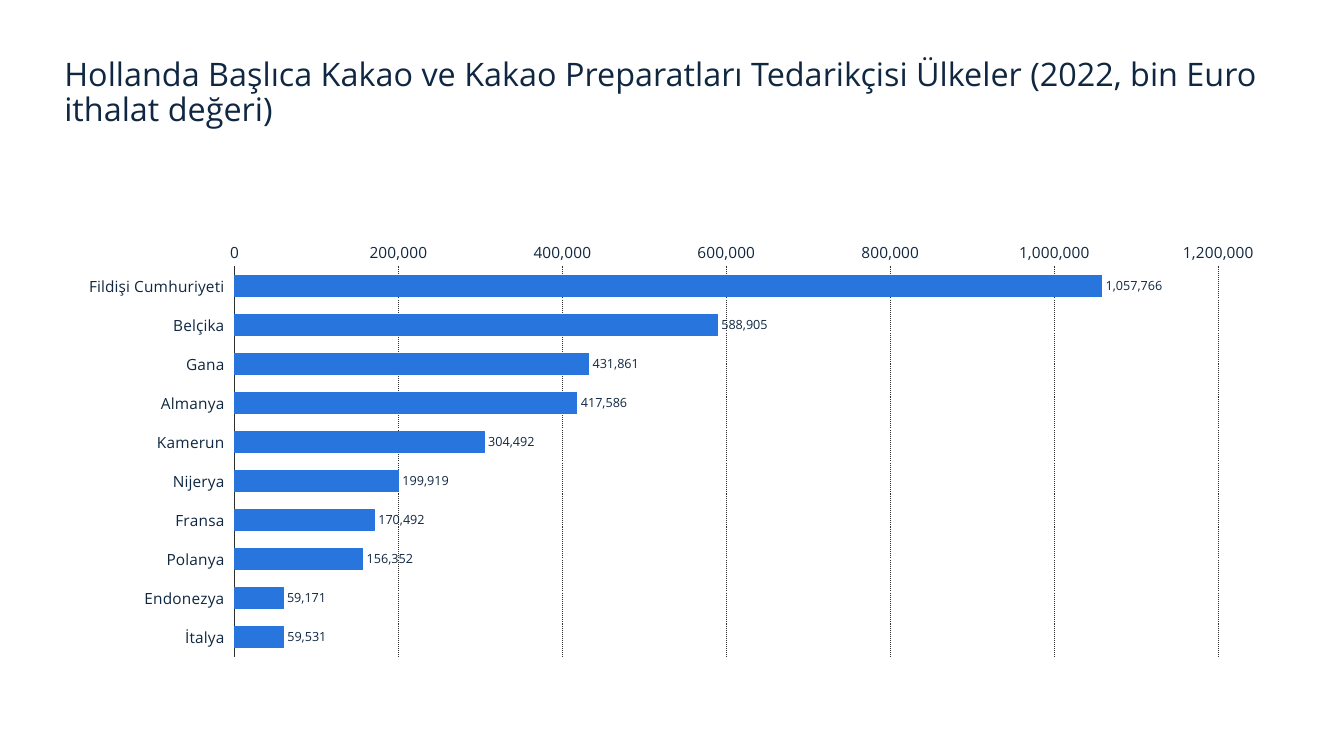
from pptx import Presentation
from pptx.chart.data import CategoryChartData
from pptx.dml.color import RGBColor
from pptx.enum.chart import XL_CHART_TYPE, XL_LABEL_POSITION, XL_TICK_LABEL_POSITION, XL_TICK_MARK
from pptx.enum.dml import MSO_LINE
from pptx.enum.text import MSO_ANCHOR
from pptx.oxml import parse_xml
from pptx.oxml.ns import nsdecls
from pptx.util import Pt

NAVY = RGBColor(0x0F, 0x27, 0x41)
BLUE = RGBColor(0x28, 0x75, 0xDD)
GREY = RGBColor(0x2F, 0x2F, 0x2F)
FONT = "Open Sans"

IMPORTS = {
    "Fildişi Cumhuriyeti": 1057766,
    "Belçika": 588905,
    "Gana": 431861,
    "Almanya": 417586,
    "Kamerun": 304492,
    "Nijerya": 199919,
    "Fransa": 170492,
    "Polanya": 156352,
    "Endonezya": 59171,
    "İtalya": 59531,
}


def style_font(font, size):
    font.name = FONT
    font.size = Pt(size)
    font.color.rgb = NAVY


prs = Presentation()
prs.slide_width = Pt(960)
prs.slide_height = Pt(540)
slide = prs.slides.add_slide(prs.slide_layouts[6])

# Import chart
import_data = CategoryChartData(number_format="#,##0")
import_data.categories = list(IMPORTS)
import_data.add_series("Series 1", list(IMPORTS.values()))
chart = slide.shapes.add_chart(
    XL_CHART_TYPE.BAR_CLUSTERED, Pt(46.1), Pt(165.6), Pt(867.6), Pt(309.6), import_data
).chart
chart.has_legend = False
chart.has_title = False
style_font(chart.font, 11)

plot_area = chart.element.xpath("c:chart/c:plotArea")[0]
plot_area.insert(0, parse_xml(
    f'<c:layout {nsdecls("c")}><c:manualLayout><c:layoutTarget val="inner"/>'
    '<c:xMode val="edge"/><c:yMode val="edge"/><c:x val="0.14"/><c:y val="0.08"/>'
    '<c:w val="0.81"/><c:h val="0.9"/></c:manualLayout></c:layout>'
))

countries = chart.category_axis
countries.reverse_order = True
countries.tick_label_position = XL_TICK_LABEL_POSITION.LOW
countries.format.line.color.rgb = GREY
countries.format.line.width = Pt(0.75)

euros = chart.value_axis
euros.minimum_scale = 0
euros.maximum_scale = 1200000
euros.major_unit = 200000
euros.tick_labels.number_format = "#,##0"
euros.tick_labels.number_format_is_linked = False
euros.format.line.fill.background()
gridline = euros.major_gridlines.format.line
gridline.color.rgb = GREY
gridline.width = Pt(0.75)
gridline.dash_style = MSO_LINE.ROUND_DOT

for axis in (countries, euros):
    axis.major_tick_mark = XL_TICK_MARK.NONE
    axis.minor_tick_mark = XL_TICK_MARK.NONE
    style_font(axis.tick_labels.font, 11)

bars = chart.plots[0]
bars.gap_width = 80
bars.overlap = -30
bars.vary_by_categories = False
bars.has_data_labels = True
labels = bars.data_labels
labels.show_value = True
labels.position = XL_LABEL_POSITION.OUTSIDE_END
labels.number_format = "#,##0"
labels.number_format_is_linked = False
style_font(labels.font, 9)
bar_format = bars.series[0].format
bar_format.fill.solid()
bar_format.fill.fore_color.rgb = BLUE
bar_format.line.color.rgb = BLUE
bar_format.line.width = Pt(0.75)

# Title
title = slide.shapes.add_textbox(Pt(38.9), Pt(33.1), Pt(881.3), Pt(61.9)).text_frame
title.word_wrap = True
title.vertical_anchor = MSO_ANCHOR.BOTTOM
heading = title.paragraphs[0]
heading.line_spacing = 0.9
heading_run = heading.add_run()
heading_run.text = (
    "Hollanda Başlıca Kakao ve Kakao Preparatları Tedarikçisi Ülkeler "
    "(2022, bin Euro ithalat değeri)"
)
style_font(heading_run.font, 23.1)

prs.save("out.pptx")
